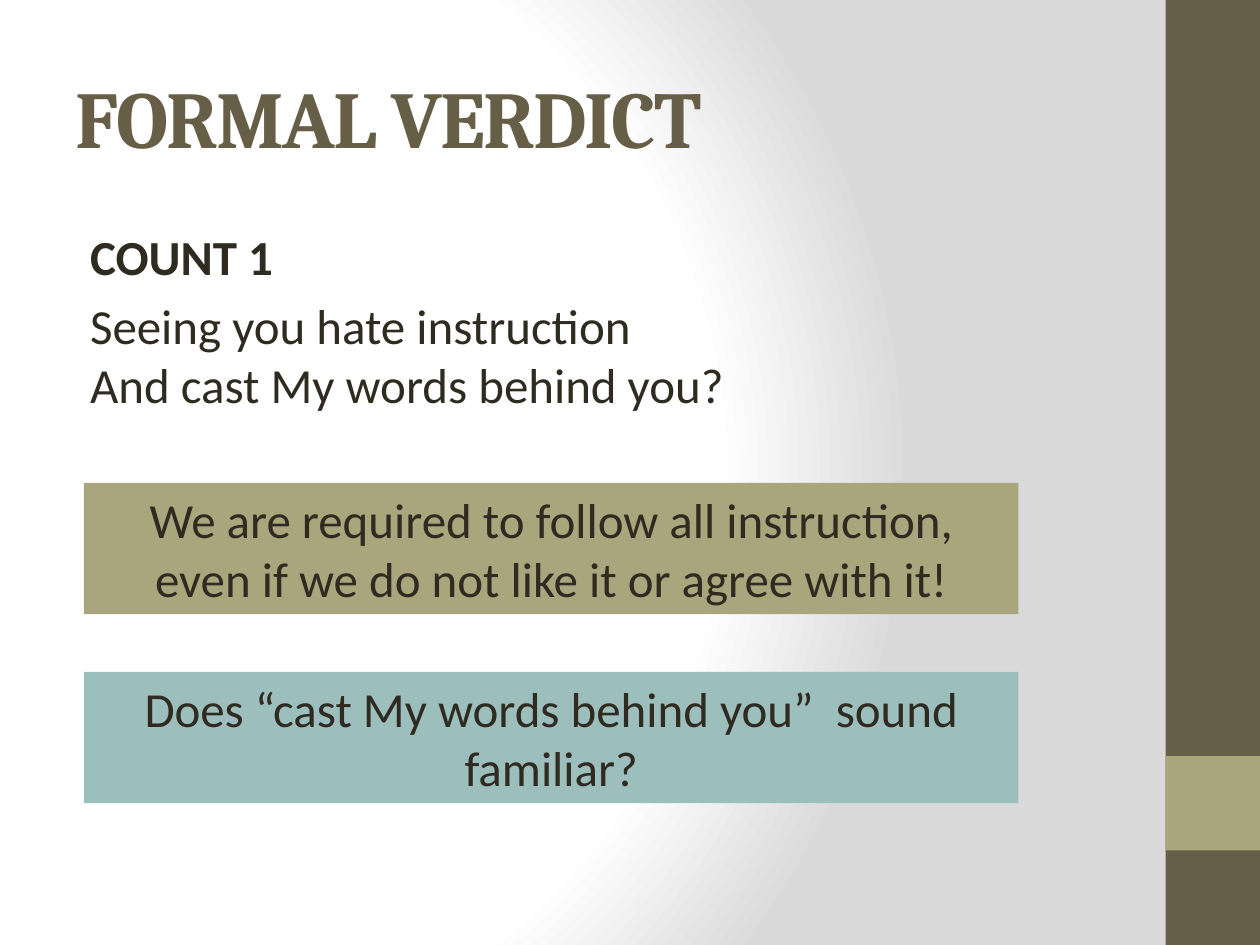
from lxml import etree
from pptx import Presentation
from pptx import util as u
from pptx.dml.color import RGBColor
from pptx.enum import shapes, text
from pptx.oxml.ns import qn

PX = 7620  # EMU in one px, 120 px to the inch

BROWN = RGBColor(0x67, 0x5E, 0x47)
OLIVE = RGBColor(0xA9, 0xA5, 0x7C)
TEAL = RGBColor(0x9C, 0xBE, 0xBD)
INK = RGBColor(0x2F, 0x2B, 0x20)
WHITE = RGBColor(0xFF, 0xFF, 0xFF)
GREY = RGBColor(0xDA, 0xDA, 0xDA)

TITLE = dict(name="Cambria", size=u.Pt(46), bold=True)
BODY = dict(name="Calibri", size=u.Pt(28), bold=False)
COUNT = dict(BODY, bold=True)


def px(*values):
    return [u.Emu(v * PX) for v in values]


def add_rect(s, box, color):
    sp = s.shapes.add_shape(shapes.MSO_SHAPE.RECTANGLE, *px(*box))
    sp.shadow.inherit = False
    sp.fill.solid()
    sp.fill.fore_color.rgb = color
    sp.line.fill.background()
    return sp


def add_text_box(s, box, anchor):
    tf = s.shapes.add_textbox(*px(*box)).text_frame
    tf.word_wrap = True
    tf.vertical_anchor = anchor
    return tf


def write(p, words, style, color=INK, align=text.PP_ALIGN.LEFT):
    p.text = words
    p.alignment = align
    for r in p.runs:
        for key, value in style.items():
            setattr(r.font, key, value)
        r.font.color.rgb = color


def add_background(s):
    """Round gradient, white in the middle left and grey outside."""
    s.background.fill.solid()
    bg = s.element.find(".//" + qn("p:bgPr"))
    bg.remove(bg.find(qn("a:solidFill")))
    grad = etree.Element(qn("a:gradFill"), rotWithShape="1")
    bg.insert(0, grad)
    stops = etree.SubElement(grad, qn("a:gsLst"))
    for percent, color in ((0, WHITE), (75, WHITE), (100, GREY)):
        stop = etree.SubElement(stops, qn("a:gs"), pos=str(percent * 1000))
        etree.SubElement(stop, qn("a:srgbClr"), val=str(color))
    circle = etree.SubElement(grad, qn("a:path"), path="circle")
    etree.SubElement(circle, qn("a:fillToRect"),
                     l="20000", t="50000", r="100000", b="50000")


def add_side_band(s, x, y, w, h):
    add_rect(s, (x, y, w, h), BROWN)
    add_rect(s, (x, y + h - 2 * w, w, w), OLIVE)


def add_title(s, box, words):
    tf = add_text_box(s, box, text.MSO_ANCHOR.MIDDLE)
    write(tf.paragraphs[0], words, TITLE, BROWN)
    # Letters set 1 pt closer
    for rpr in tf.paragraphs[0].runs[0].font._element.iter(qn("a:rPr")):
        rpr.set("spc", "-100")


def add_verse(s, box, heading, verse):
    tf = add_text_box(s, box, text.MSO_ANCHOR.TOP)
    write(tf.paragraphs[0], heading, COUNT)
    write(tf.add_paragraph(), verse, BODY)
    for p in tf.paragraphs:
        p.space_before = u.Pt(5.6)
        ppr = p._p.get_or_add_pPr()
        ppr.set("marL", str(14 * PX))
        ppr.set("indent", "0")


def add_callouts(s, x, y, w, h, step, callouts):
    for i, (words, color) in enumerate(callouts):
        tf = add_rect(s, (x, y + i * step, w, h), color).text_frame
        tf.word_wrap = True
        tf.vertical_anchor = text.MSO_ANCHOR.TOP
        write(tf.paragraphs[0], words, BODY, align=text.PP_ALIGN.CENTER)


def main():
    prs = Presentation()
    prs.slide_width, prs.slide_height = px(1200, 900)
    s = prs.slides.add_slide(prs.slide_layouts[6])
    add_background(s)
    add_side_band(s, 1110, 0, 90, 900)
    add_title(s, (60, 36, 1000, 150), "FORMAL VERDICT")
    add_verse(s, (60, 210, 1000, 210), "COUNT 1",
              "Seeing you hate instruction\vAnd cast My words behind you?")
    add_callouts(s, 80, 460, 890, 125, 180, (
        ("We are required to follow all instruction, "
         "even if we do not like it or agree with it!", OLIVE),
        ("Does “cast My words behind you”  sound familiar?", TEAL),
    ))
    prs.save("out.pptx")


if __name__ == "__main__":
    main()
